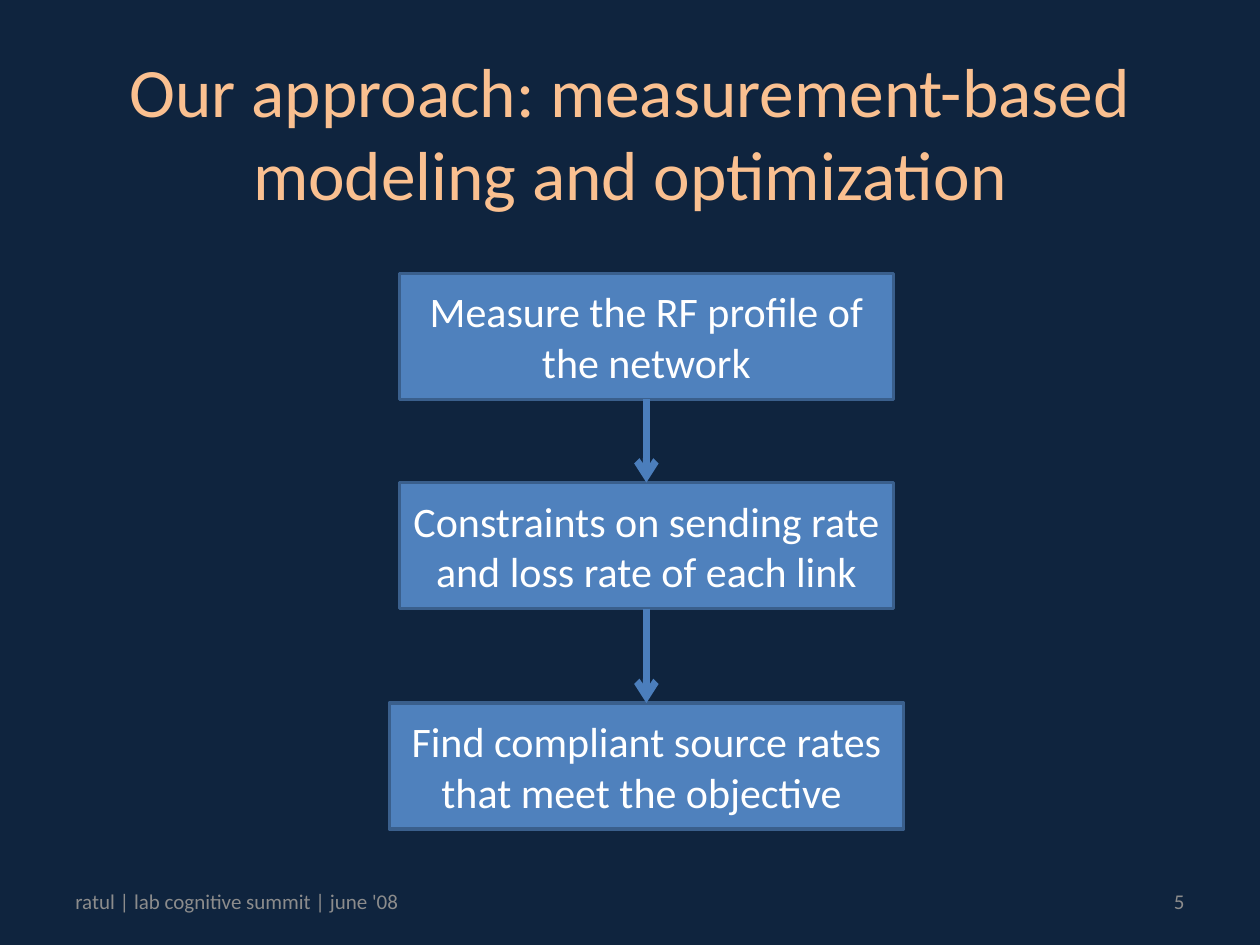
from lxml import etree
from pptx import Presentation
from pptx.dml.color import RGBColor
from pptx.enum import shapes, text
from pptx.oxml import ns
from pptx.util import Inches, Pt


def color(value):
    return RGBColor.from_string(value)


class FlowSlide:
    font = "Calibri"
    background, title_color, footer_color = "0F243E", "FAC090", "8C8C8C"
    box_fill, box_line, arrow_color, box_text = "4F81BD", "3A5F8C", "4B7EBC", "FFFFFF"
    center, box_height = 5.13, 1

    def __init__(self, deck):
        self.page = deck.slides.add_slide(deck.slide_layouts[5])
        fill = self.page.background.fill
        fill.solid()
        fill.fore_color.rgb = color(self.background)

    def set_text(self, shape, words, size, ink, align):
        frame = shape.text_frame
        frame.word_wrap = True
        frame.auto_size = text.MSO_AUTO_SIZE.NONE
        frame.vertical_anchor = text.MSO_ANCHOR.MIDDLE
        para = frame.paragraphs[0]
        para.text = words
        para.alignment = align
        para.font.name = self.font
        para.font.size = Pt(size)
        para.font.color.rgb = color(ink)

    def title(self, words):
        title = self.page.shapes.title
        title.left, title.top = Inches(0.5), Inches(0.42)
        title.width, title.height = Inches(9), Inches(1.25)
        self.set_text(title, words, 39.6, self.title_color, text.PP_ALIGN.CENTER)

    def footer(self, words, left, width, align):
        box = self.page.shapes.add_textbox(
            Inches(left), Inches(6.95), Inches(width), Inches(0.4))
        self.set_text(box, words, 12, self.footer_color, align)

    def step(self, words, top, width):
        box = self.page.shapes.add_shape(
            shapes.MSO_SHAPE.RECTANGLE, Inches(self.center - width / 2),
            Inches(top), Inches(width), Inches(self.box_height))
        box.shadow.inherit = False
        box.fill.solid()
        box.fill.fore_color.rgb = color(self.box_fill)
        box.line.color.rgb = color(self.box_line)
        box.line.width = Pt(2)
        self.set_text(box, words, 24, self.box_text, text.PP_ALIGN.CENTER)
        return box

    def arrow(self, upper, lower):
        arrow = self.page.shapes.add_connector(shapes.MSO_CONNECTOR.STRAIGHT, 0, 0, 0, 0)
        arrow.begin_connect(upper, 2)
        arrow.end_connect(lower, 0)
        arrow.line.color.rgb = color(self.arrow_color)
        arrow.line.width = Pt(4)
        properties = arrow.element.spPr
        etree.SubElement(properties.get_or_add_ln(), ns.qn("a:tailEnd"), type="arrow")
        etree.SubElement(properties, ns.qn("a:effectLst"))


def main():
    deck = Presentation()
    deck.slide_width, deck.slide_height = Inches(10), Inches(7.5)
    slide = FlowSlide(deck)
    slide.title("Our approach: measurement-based modeling and optimization")
    slide.footer("ratul | lab cognitive summit | june '08", 0.5, 2.92, text.PP_ALIGN.LEFT)
    slide.footer("5", 7.17, 2.33, text.PP_ALIGN.RIGHT)
    steps = [
        slide.step("Measure the RF profile of the network", 2.17, 3.92),
        slide.step("Constraints on sending rate and loss rate of each link", 3.83, 3.92),
        slide.step("Find compliant source rates that meet the objective ", 5.58, 4.08),
    ]
    for upper, lower in zip(steps, steps[1:]):
        slide.arrow(upper, lower)
    deck.save("out.pptx")


if __name__ == "__main__":
    main()
